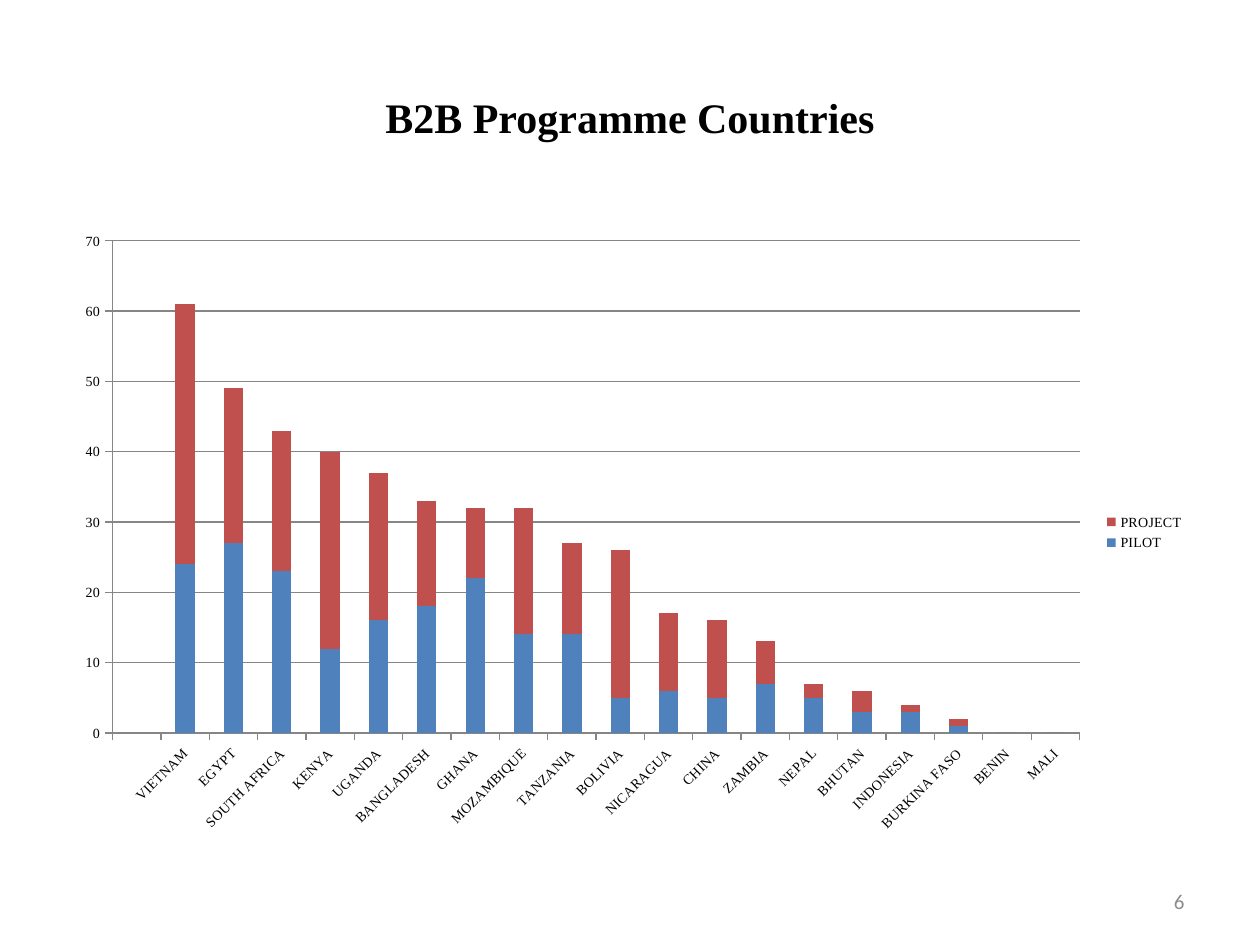
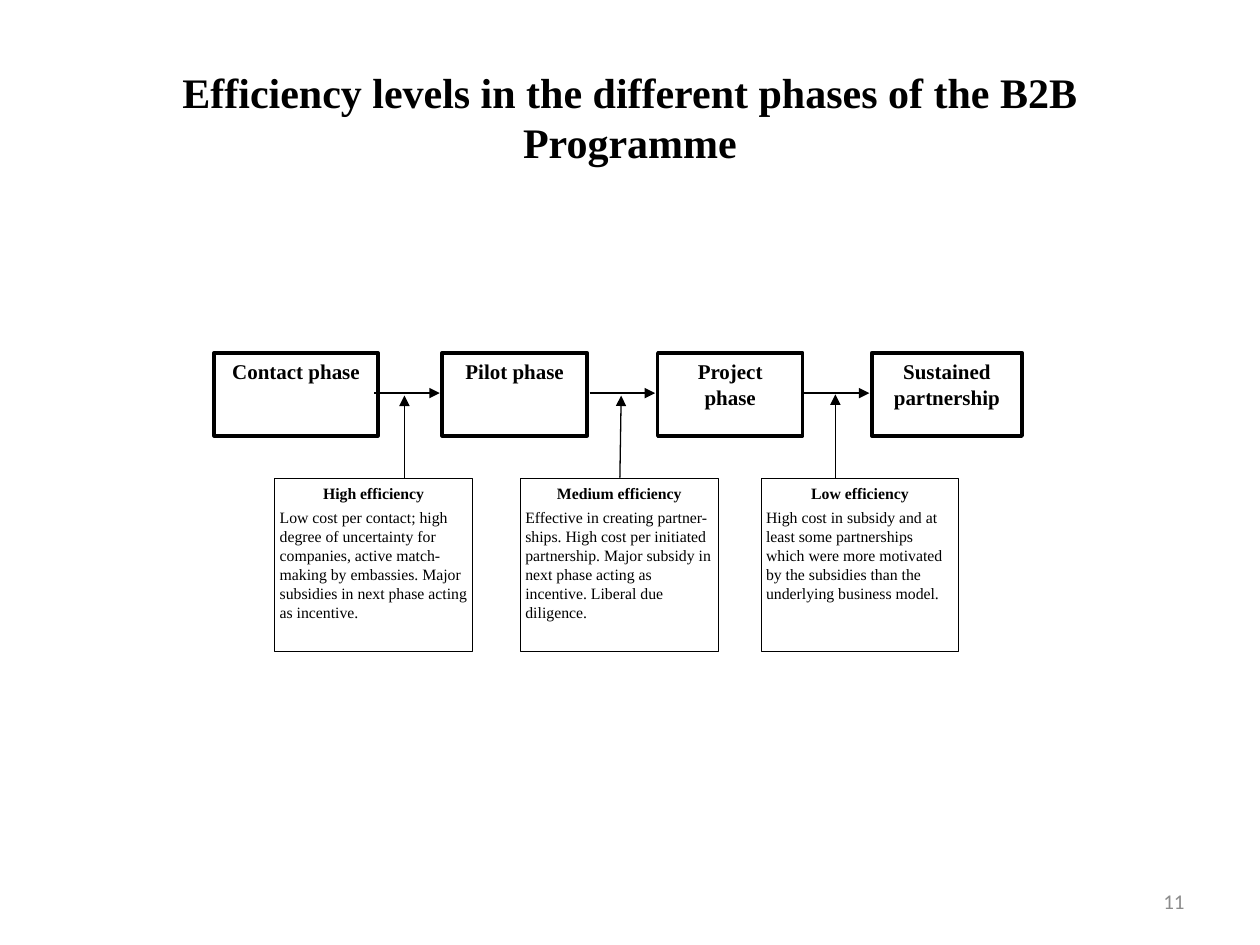
from pptx import Presentation
from pptx.chart.data import CategoryChartData
from pptx.dml.color import RGBColor
from pptx.enum.chart import XL_CHART_TYPE as ChartType, XL_LEGEND_POSITION as LegendPos
from pptx.enum.chart import XL_TICK_MARK as Tick
from pptx.enum.shapes import MSO_CONNECTOR as Connector, MSO_SHAPE as Shape
from pptx.enum.text import MSO_ANCHOR as Anchor, PP_ALIGN as Align
from pptx.oxml.ns import qn
from pptx.util import Inches, Pt
from lxml import etree

BLACK = RGBColor(0x00, 0x00, 0x00)
WHITE = RGBColor(0xFF, 0xFF, 0xFF)
GREY = RGBColor(0x8C, 0x8C, 0x8C)
AXIS_GREY = RGBColor(0x86, 0x86, 0x86)
BLUE = RGBColor(0x4F, 0x81, 0xBD)
RED = RGBColor(0xC0, 0x50, 0x4D)
SERIF = "Times New Roman"

prs = Presentation()
prs.slide_width, prs.slide_height = Inches(10), Inches(7.5)


def style(target, size, bold=False, color=BLACK, name=SERIF):
    """Format the font of a paragraph or a chart part."""
    font = target.font
    font.name, font.size, font.bold = name, Pt(size), bold
    font.color.rgb = color


def add_box(s, left, top, width, height, line_width):
    """Add a white box with a black outline and return its text frame."""
    box = s.shapes.add_shape(Shape.RECTANGLE, Inches(left), Inches(top),
                             Inches(width), Inches(height))
    box.shadow.inherit = False
    box.fill.solid()
    box.fill.fore_color.rgb = WHITE
    box.line.color.rgb = BLACK
    box.line.width = Pt(line_width)
    tf = box.text_frame
    tf.word_wrap = True
    tf.vertical_anchor = Anchor.TOP
    return tf


# Titles and page numbers
slides = []
for title, number in [
    ("B2B Programme Countries", "6"),
    ("Efficiency levels in the different phases of the B2B Programme", "11"),
]:
    s = prs.slides.add_slide(prs.slide_layouts[5])
    slides.append(s)
    sp = s.shapes.title
    sp.left, sp.top, sp.width, sp.height = Inches(0.5), Inches(0.3), Inches(9), Inches(1.25)
    sp.text_frame.text = title
    sp.text_frame.vertical_anchor = Anchor.MIDDLE
    p = sp.text_frame.paragraphs[0]
    p.alignment = Align.CENTER
    style(p, 24, bold=True)

    tf = s.shapes.add_textbox(Inches(7.17), Inches(6.95), Inches(2.33), Inches(0.4)).text_frame
    tf.word_wrap = True
    tf.vertical_anchor = Anchor.MIDDLE
    tf.text = number
    p = tf.paragraphs[0]
    p.alignment = Align.RIGHT
    style(p, 12, color=GREY, name="Calibri")

countries_slide, phases_slide = slides

# Slide 1: pilots and projects by country
countries = [
    ("", None, None), ("VIETNAM", 24, 37), ("EGYPT", 27, 22), ("SOUTH AFRICA", 23, 20),
    ("KENYA", 12, 28), ("UGANDA", 16, 21), ("BANGLADESH", 18, 15), ("GHANA", 22, 10),
    ("MOZAMBIQUE", 14, 18), ("TANZANIA", 14, 13), ("BOLIVIA", 5, 21), ("NICARAGUA", 6, 11),
    ("CHINA", 5, 11), ("ZAMBIA", 7, 6), ("NEPAL", 5, 2), ("BHUTAN", 3, 3),
    ("INDONESIA", 3, 1), ("BURKINA FASO", 1, 1), ("BENIN", 0, 0), ("MALI", 0, 0),
]
names, pilots, projects = zip(*countries)
data = CategoryChartData()
data.categories = names
data.add_series("PILOT", pilots)
data.add_series("PROJECT", projects)
chart = countries_slide.shapes.add_chart(
    ChartType.COLUMN_STACKED, Inches(0.5), Inches(1.75), Inches(9), Inches(4.95), data).chart
style(chart, 10, name="Calibri")
chart.has_title = False
chart.has_legend = True
chart.legend.position = LegendPos.RIGHT
chart.legend.include_in_layout = False
style(chart.legend, 8)

plot = chart.plots[0]
plot.gap_width, plot.overlap = 150, 100
for series, color in zip(plot.series, (BLUE, RED)):
    series.format.fill.solid()
    series.format.fill.fore_color.rgb = color

for axis in (chart.category_axis, chart.value_axis):
    style(axis.tick_labels, 8)
    axis.major_tick_mark = Tick.OUTSIDE
    axis.minor_tick_mark = Tick.NONE
    axis.format.line.color.rgb = AXIS_GREY
    axis.format.line.width = Pt(0.75)
chart.category_axis._element.find(".//" + qn("a:bodyPr")).set("rot", "-2700000")
values = chart.value_axis
values.minimum_scale, values.maximum_scale, values.major_unit = 0, 70, 10
values.has_major_gridlines = True
values.major_gridlines.format.line.color.rgb = AXIS_GREY
values.major_gridlines.format.line.width = Pt(0.75)

# Slide 2: phases, with the efficiency of each step between them
for left, width, line_width, phase in [
    (1.7, 1.3, 2, "Contact phase"),
    (3.51, 1.15, 2, "Pilot phase"),
    (5.22, 1.15, 2, "Project phase"),
    (6.92, 1.19, 2.25, "Sustained partnership"),
]:
    tf = add_box(phases_slide, left, 2.8, width, 0.66, line_width)
    tf.text = phase
    p = tf.paragraphs[0]
    p.alignment = Align.CENTER
    style(p, 12, bold=True)

for left, level, reason in [
    (2.18, "High efficiency",
     "Low cost per contact; high degree of uncertainty for companies, active match-making "
     "by embassies. Major subsidies in next phase acting as incentive."),
    (4.13, "Medium efficiency",
     "Effective in creating partner-ships. High cost per initiated partnership. Major subsidy "
     "in next phase acting as incentive. Liberal due diligence."),
    (6.04, "Low efficiency",
     "High cost in subsidy and at least some partnerships which were more motivated by the "
     "subsidies than the underlying business model."),
]:
    tf = add_box(phases_slide, left, 3.8, 1.57, 1.37, 0.5)
    tf.margin_left = tf.margin_right = tf.margin_top = tf.margin_bottom = Inches(0.04)
    tf.text = level
    heading, body = tf.paragraphs[0], tf.add_paragraph()
    heading.alignment, heading.space_after = Align.CENTER, Pt(3)
    style(heading, 9, bold=True)
    body.text = reason
    body.alignment = Align.LEFT
    style(body, 9)

step_arrows = [(left, 3.12, left + 0.52, 3.12) for left in (2.97, 4.68, 6.38)]
level_arrows = [(3.21, 3.79, 3.21, 3.14), (4.92, 3.79, 4.93, 3.14), (6.63, 3.79, 6.63, 3.13)]
for ends in step_arrows + level_arrows:
    arrow = phases_slide.shapes.add_connector(Connector.STRAIGHT, *map(Inches, ends))
    arrow.line.color.rgb = BLACK
    arrow.line.width = Pt(0.75)
    etree.SubElement(arrow.line._get_or_add_ln(), qn("a:tailEnd"), type="triangle")
    etree.SubElement(arrow._element.spPr, qn("a:effectLst"))

prs.save("out.pptx")
